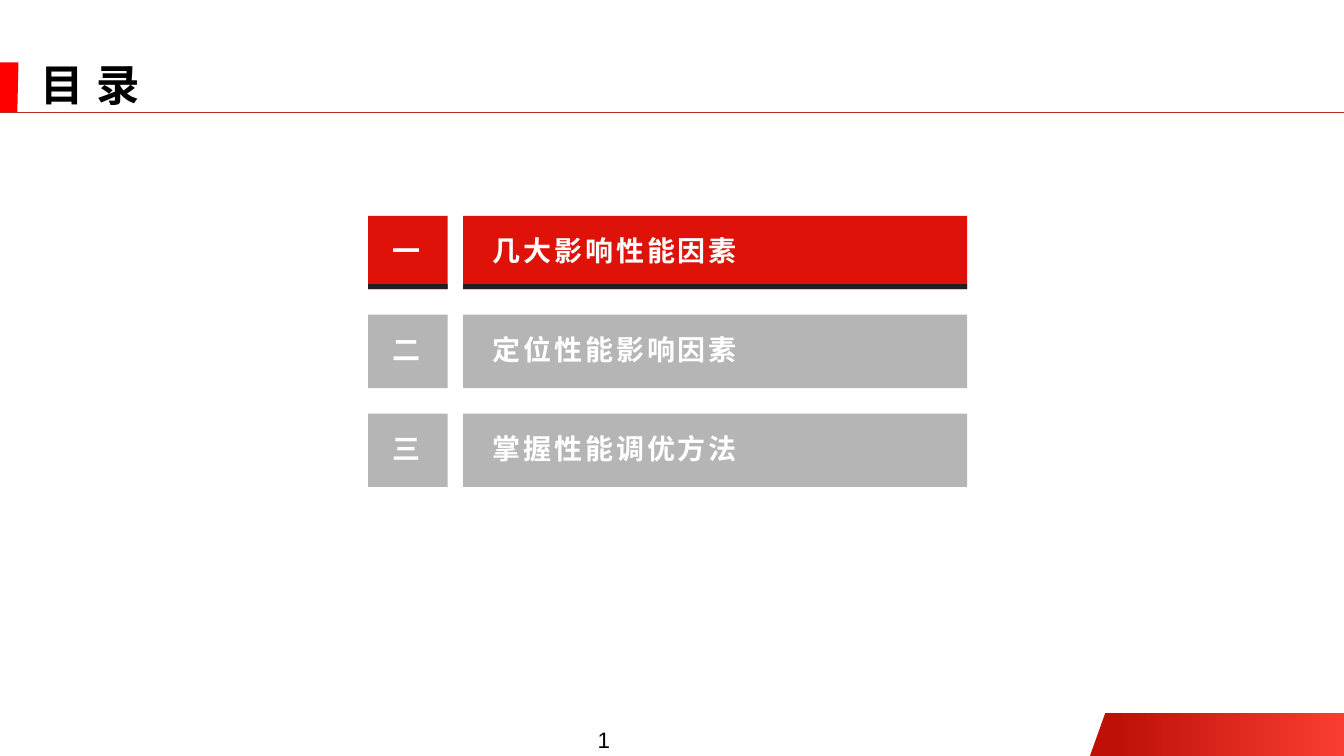
from dataclasses import dataclass

import lxml.etree
import pptx
import pptx.dml.color
import pptx.enum.shapes
import pptx.enum.text
import pptx.oxml.ns
import pptx.util

Pt = pptx.util.Pt
Align = pptx.enum.text.PP_ALIGN
Anchor = pptx.enum.text.MSO_ANCHOR

SLIDE_WIDTH, SLIDE_HEIGHT = 960, 540
CHINESE_FONT = "Noto Sans CJK SC"
WHITE, BLACK = "FFFFFF", "000000"
ACTIVE_RED, INACTIVE_GRAY, UNDERLINE = "DE1208", "B5B5B5", "202022"

# Agenda grid
FIRST_ROW_TOP, ROW_PITCH, ROW_HEIGHT = 154.2, 70.6, 52.4
UNDERLINE_HEIGHT = 3.6
NUMBER_LEFT, NUMBER_WIDTH = 262.9, 56.9
TOPIC_LEFT, TOPIC_WIDTH = 330.9, 360
TEXT_OFFSET, TEXT_HEIGHT = 9.2, 31.5


@dataclass
class AgendaItem:
    number: str
    topic: str
    active: bool = False


@dataclass
class TextStyle:
    size: float
    color: str
    font: str = CHINESE_FONT
    bold: bool = True
    letter_spacing: float = 0
    line_spacing: float = 1.0
    align: Align = Align.LEFT
    anchor: Anchor = Anchor.TOP
    wrap: bool = True


AGENDA = [
    AgendaItem("一", "几大影响性能因素", active=True),
    AgendaItem("二", "定位性能影响因素"),
    AgendaItem("三", "掌握性能调优方法"),
]
TITLE_STYLE = TextStyle(31, BLACK, letter_spacing=1, line_spacing=0.9)
PAGE_STYLE = TextStyle(16, BLACK, font="Arial", bold=False, align=Align.CENTER,
                       anchor=Anchor.BOTTOM, wrap=False)
NUMBER_STYLE = TextStyle(20, WHITE, wrap=False)
TOPIC_STYLE = TextStyle(20, WHITE, letter_spacing=2)


def rgb(color: str) -> pptx.dml.color.RGBColor:
    return pptx.dml.color.RGBColor.from_string(color)


def add_text(slide, left: float, top: float, width: float, height: float,
             text: str, style: TextStyle) -> None:
    shape = slide.shapes.add_textbox(Pt(left), Pt(top), Pt(width), Pt(height))
    text_frame = shape.text_frame
    text_frame.word_wrap = style.wrap
    text_frame.vertical_anchor = style.anchor
    text_frame.text = text
    paragraph = text_frame.paragraphs[0]
    paragraph.alignment = style.align
    paragraph.line_spacing = style.line_spacing
    run = paragraph.runs[0]
    run.font.size = Pt(style.size)
    run.font.bold = style.bold
    run.font.name = style.font
    run.font.color.rgb = rgb(style.color)
    # East Asian typeface and letter spacing
    properties = run.font._element
    east_asian = lxml.etree.SubElement(properties, pptx.oxml.ns.qn("a:ea"))
    east_asian.set("typeface", style.font)
    if style.letter_spacing:
        properties.set("spc", str(round(style.letter_spacing * 100)))


def add_bar(slide, left: float, top: float, width: float, height: float, color: str) -> None:
    shape = slide.shapes.add_shape(pptx.enum.shapes.MSO_SHAPE.RECTANGLE,
                                   Pt(left), Pt(top), Pt(width), Pt(height))
    shape.shadow.inherit = False
    shape.fill.solid()
    shape.fill.fore_color.rgb = rgb(color)
    shape.line.fill.background()


def add_polygon(slide, points: list[tuple[float, float]]):
    corners = [(Pt(x), Pt(y)) for x, y in points]
    builder = slide.shapes.build_freeform(*corners[0], scale=1.0)
    builder.add_line_segments(corners[1:], close=True)
    shape = builder.convert_to_shape()
    shape.shadow.inherit = False
    shape.line.fill.background()
    return shape


def add_frame(slide) -> None:
    # Corner wedge with a red gradient
    wedge = add_polygon(slide, [(778.5, SLIDE_HEIGHT), (789.5, 509.2),
                                (SLIDE_WIDTH, 509.2), (SLIDE_WIDTH, SLIDE_HEIGHT)])
    wedge.fill.gradient()
    wedge.fill.gradient_angle = 0
    for stop, (position, color) in zip(wedge.fill.gradient_stops,
                                       [(0.09, "BE1007"), (1, "F93D32")]):
        stop.position = position
        stop.color.rgb = rgb(color)

    # Title marker
    marker = add_polygon(slide, [(0, 44.6), (13.2, 44.6), (12.4, 80.3), (0, 80.3)])
    marker.fill.solid()
    marker.fill.fore_color.rgb = rgb("FF0000")

    # Title rule
    rule = slide.shapes.add_connector(pptx.enum.shapes.MSO_CONNECTOR.STRAIGHT,
                                      0, Pt(80.2), Pt(SLIDE_WIDTH), Pt(80.2))
    rule.line.color.rgb = rgb("B82E24")
    rule.line.width = Pt(0.5)
    lxml.etree.SubElement(rule._element.spPr, pptx.oxml.ns.qn("a:effectLst"))

    # Page number and title
    add_text(slide, 414, 514.8, 34.6, 26.6, "1", PAGE_STYLE)
    add_text(slide, 21.6, 42.5, 902.7, 38.2, "目 录", TITLE_STYLE)


def add_agenda_item(slide, item: AgendaItem, top: float) -> None:
    for left, width in [(NUMBER_LEFT, NUMBER_WIDTH), (TOPIC_LEFT, TOPIC_WIDTH)]:
        add_bar(slide, left, top, width, ROW_HEIGHT,
                ACTIVE_RED if item.active else INACTIVE_GRAY)
        if item.active:
            add_bar(slide, left, top + ROW_HEIGHT - UNDERLINE_HEIGHT, width,
                    UNDERLINE_HEIGHT, UNDERLINE)
    text_top = top + TEXT_OFFSET
    add_text(slide, 273.6, text_top, 34.6, TEXT_HEIGHT, item.number, NUMBER_STYLE)
    add_text(slide, 344.9, text_top, 333.4, TEXT_HEIGHT, item.topic, TOPIC_STYLE)


def main() -> None:
    presentation = pptx.Presentation()
    presentation.slide_width = Pt(SLIDE_WIDTH)
    presentation.slide_height = Pt(SLIDE_HEIGHT)
    slide = presentation.slides.add_slide(presentation.slide_layouts[6])
    slide.background.fill.solid()
    slide.background.fill.fore_color.rgb = rgb(WHITE)

    add_frame(slide)
    for index, item in enumerate(AGENDA):
        add_agenda_item(slide, item, FIRST_ROW_TOP + index * ROW_PITCH)

    presentation.save("out.pptx")


if __name__ == "__main__":
    main()
